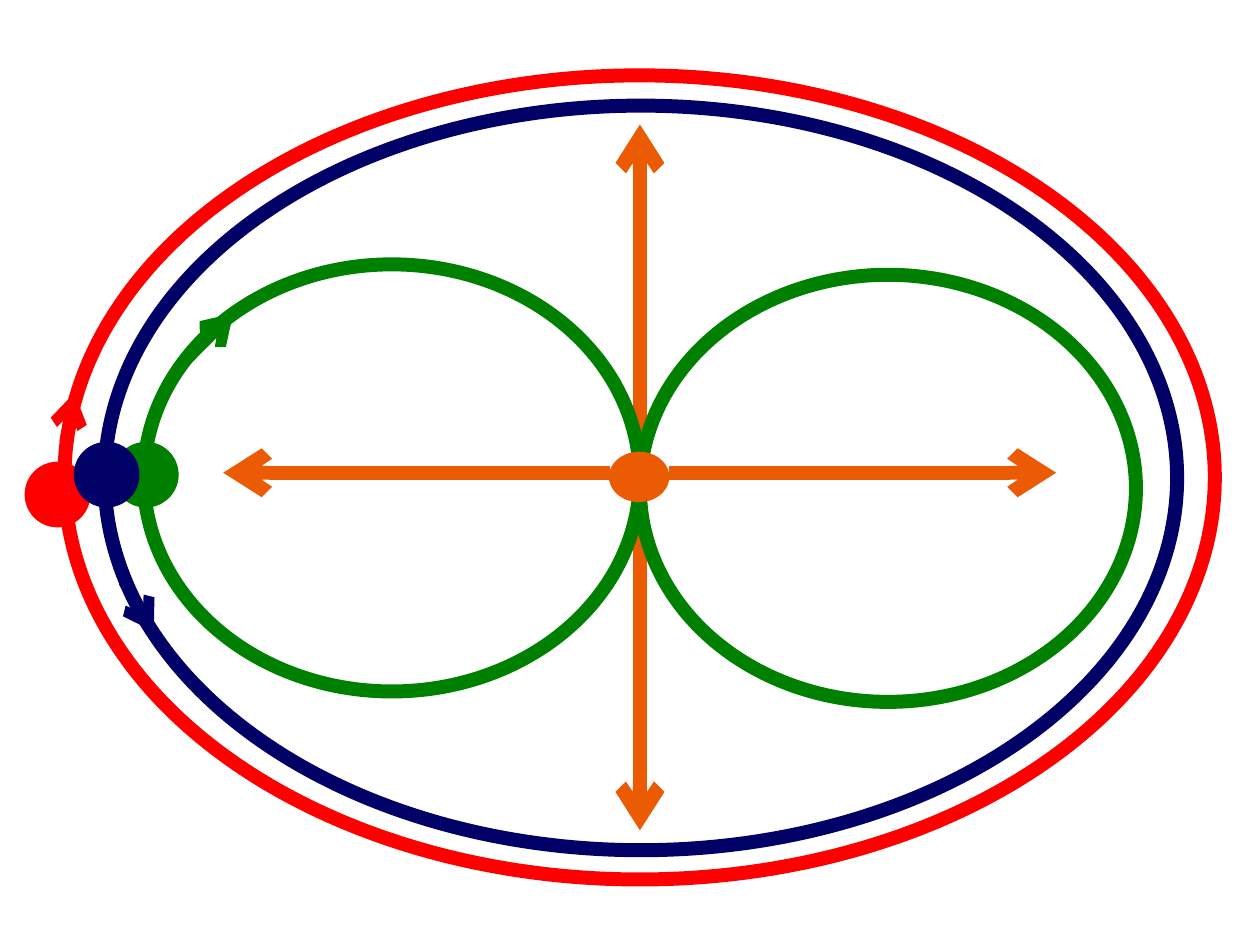
from dataclasses import dataclass
from typing import NamedTuple

from lxml.etree import SubElement
from pptx import Presentation
from pptx.dml.color import RGBColor as Rgb
from pptx.enum.shapes import MSO_CONNECTOR as Link, MSO_SHAPE as Form
from pptx.oxml.ns import qn
from pptx.util import Cm, Pt


@dataclass(frozen=True)
class Theme:
    orange: str = "EB5B03"
    red: str = "FF0000"
    navy: str = "000066"
    green: str = "008000"
    thick: float = 8
    mid: float = 6
    thin: float = 0.75


class Arrow(NamedTuple):
    x1: float
    y1: float
    x2: float
    y2: float
    color: str
    width: float


class Oval(NamedTuple):
    x: float
    y: float
    w: float
    h: float
    color: str
    solid: bool = False


THEME = Theme()
MID_X, AXIS_Y = 12.9, 9.53
LOOP_W, LOOP_H = 10, 8.61
DOT = 1.3

# Orange arrows pointing out from the hub
AXES = [
    Arrow(x1, y1, x2, y2, THEME.orange, THEME.thick)
    for x1, y1, x2, y2 in (
        (MID_X, 10.34, MID_X, 16.74),
        (MID_X, 8.71, MID_X, 2.51),
        (12.29, AXIS_Y, 4.5, AXIS_Y),
        (13.49, AXIS_Y, 21.29, AXIS_Y),
    )
]

# Closed tracks
ORBITS = [
    Oval(1.3, 1.52, 23.19, 16.21, THEME.red),
    Oval(2.11, 2.13, 21.62, 15.01, THEME.navy),
]
LOOPS = [
    Oval(MID_X - LOOP_W, 5.33, LOOP_W, LOOP_H, THEME.green),
    Oval(MID_X, 5.54, LOOP_W, LOOP_H, THEME.green),
]

# Directions of travel
TURNS = [
    Arrow(3.71, 7.32, 4.7, 6.32, THEME.green, THEME.mid),
    Arrow(1.3, 8.92, 1.5, 7.92, THEME.red, THEME.mid),
    Arrow(2.49, 11.73, 3.1, 12.73, THEME.navy, THEME.mid),
]

# Hub and the three bodies
BODIES = [
    Oval(12.29, 9.12, 1.19, 0.99, THEME.orange, True),
    Oval(0.51, 9.32, DOT, DOT, THEME.red, True),
    Oval(2.29, 8.92, DOT, DOT, THEME.green, True),
    Oval(1.5, 8.92, DOT, DOT, THEME.navy, True),
]


def draw_arrow(slide, arrow: Arrow) -> None:
    ends = (Cm(n) for n in arrow[:4])
    line = slide.shapes.add_connector(Link.STRAIGHT, *ends)
    line.line.color.rgb = Rgb.from_string(arrow.color)
    line.line.width = Pt(arrow.width)
    SubElement(line.line._get_or_add_ln(), qn("a:tailEnd"), type="arrow")
    SubElement(line._element.spPr, qn("a:effectLst"))


def draw_oval(slide, oval: Oval) -> None:
    shape = slide.shapes.add_shape(Form.OVAL, *(Cm(n) for n in oval[:4]))
    shape.shadow.inherit = False
    color = Rgb.from_string(oval.color)
    if oval.solid:
        shape.fill.solid()
        shape.fill.fore_color.rgb = color
    else:
        shape.fill.background()
    shape.line.color.rgb = color
    shape.line.width = Pt(THEME.thin if oval.solid else THEME.thick)


def main() -> None:
    deck = Presentation()
    deck.slide_width, deck.slide_height = Cm(25.4), Cm(19.05)
    slide = deck.slides.add_slide(deck.slide_layouts[6])

    # Back to front
    for part in AXES + ORBITS + TURNS + LOOPS + BODIES:
        draw = draw_arrow if isinstance(part, Arrow) else draw_oval
        draw(slide, part)

    deck.save("out.pptx")


if __name__ == "__main__":
    main()
